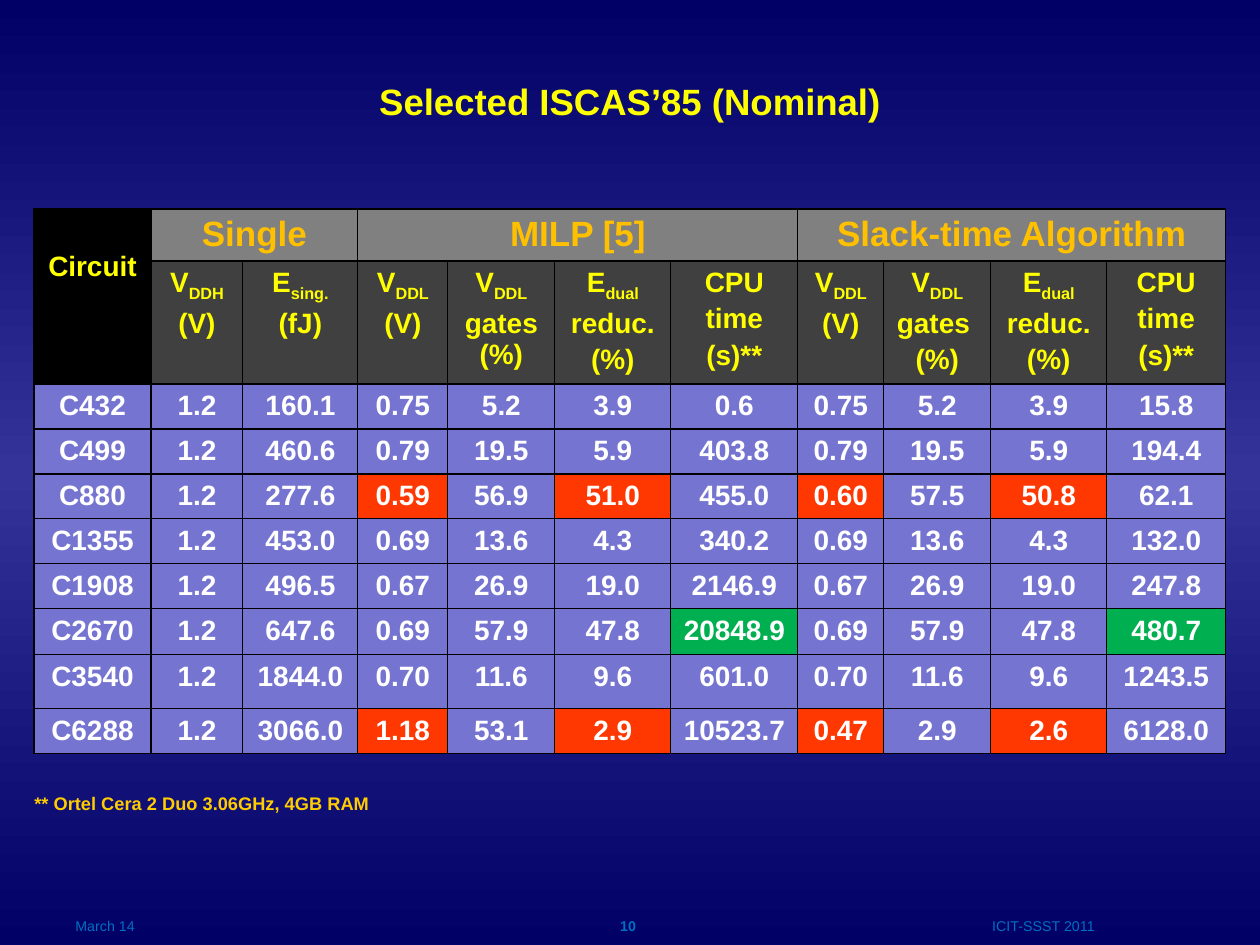
from copy import deepcopy
from dataclasses import dataclass

from lxml.etree import SubElement
from pptx import Presentation
from pptx.dml.color import RGBColor as Rgb
from pptx.enum.text import MSO_ANCHOR as Anchor, MSO_AUTO_SIZE as AutoSize, PP_ALIGN as Align
from pptx.oxml.ns import qn
from pptx.util import Pt


@dataclass(frozen=True)
class Theme:
    font: str = "Arial"
    edge: str = "000066"
    middle: str = "333399"
    yellow: str = "FFFF00"
    amber: str = "FFC000"
    note: str = "FFCC00"
    footer: str = "0070C0"
    white: str = "FFFFFF"
    black: str = "000000"
    group_fill: str = "808080"
    head_fill: str = "404040"
    body_fill: str = "7575D1"
    red: str = "FF3701"
    green: str = "00B050"
    title_size: int = 36
    group_size: int = 20
    cell_size: int = 16
    note_size: int = 18
    footer_size: int = 14


theme = Theme()
EMU_PER_PX = 914400 / 126
SUBSCRIPT = "-25000"


def px(*lengths):
    return [round(length * EMU_PER_PX) for length in lengths]


def write(frame, text, color, size, bold=True, align=Align.CENTER, lowered=False):
    """Lines are parted by |, and a subscript follows _."""
    frame.word_wrap = True
    for number, line in enumerate(text.split("|")):
        paragraph = frame.add_paragraph() if number else frame.paragraphs[0]
        paragraph.alignment = align
        if number:
            paragraph.space_before = Pt(3)
        base, _, subscript = line.partition("_")
        for part, is_low in ((base, lowered), (subscript, True)):
            if not part:
                continue
            run = paragraph.add_run()
            run.text = part
            values = {"name": theme.font, "size": Pt(size), "bold": bold}
            for name, value in values.items():
                setattr(run.font, name, value)
            run.font.color.rgb = Rgb.from_string(color)
            if is_low:
                run.font._element.set("baseline", SUBSCRIPT)


presentation = Presentation()
presentation.slide_width, presentation.slide_height = px(1260, 945)
slide = presentation.slides.add_slide(presentation.slide_layouts[5])

# Background gradient, dark at top and bottom
background = slide.background.fill
background.gradient()
background.gradient_angle = 90
stop_list = slide._element.xpath(".//a:gsLst")[0]
stop_list.insert(1, deepcopy(stop_list[0]))
stops = zip(background.gradient_stops, (0, 0.5, 1), (theme.edge, theme.middle, theme.edge))
for stop, position, color in stops:
    stop.position = position
    stop.color.rgb = Rgb.from_string(color)

# Results table
columns = [117, 92, 115, 90, 107, 116, 127, 86, 107, 116, 119]
rows = [52, 123, 45, 45, 45, 45, 45, 46, 54, 45]
groups = [(1, 2, "Single"), (3, 6, "MILP [5]"), (7, 10, "Slack-time Algorithm")]
headings = [
    "V_DDH|(V)", "E_sing.|(fJ)",
    "V_DDL|(V)", "V_DDL|gates (%)", "E_dual|reduc.|(%)", "CPU|time|(s)**",
    "V_DDL|(V)", "V_DDL|gates |(%)", "E_dual|reduc.|(%)", "CPU|time|(s)**",
]
results = [
    "C432 1.2 160.1 0.75 5.2 3.9 0.6 0.75 5.2 3.9 15.8",
    "C499 1.2 460.6 0.79 19.5 5.9 403.8 0.79 19.5 5.9 194.4",
    "C880 1.2 277.6 0.59 56.9 51.0 455.0 0.60 57.5 50.8 62.1",
    "C1355 1.2 453.0 0.69 13.6 4.3 340.2 0.69 13.6 4.3 132.0",
    "C1908 1.2 496.5 0.67 26.9 19.0 2146.9 0.67 26.9 19.0 247.8",
    "C2670 1.2 647.6 0.69 57.9 47.8 20848.9 0.69 57.9 47.8 480.7",
    "C3540 1.2 1844.0 0.70 11.6 9.6 601.0 0.70 11.6 9.6 1243.5",
    "C6288 1.2 3066.0 1.18 53.1 2.9 10523.7 0.47 2.9 2.6 6128.0",
]
highlights = {
    "C880": (theme.red, (3, 5, 7, 9)),
    "C2670": (theme.green, (6, 10)),
    "C6288": (theme.red, (3, 5, 7, 9)),
}

table = slide.shapes.add_table(
    len(rows), len(columns), *px(34, 209, sum(columns), sum(rows))).table
table.first_row = table.horz_banding = False
for column, width in zip(table.columns, px(*columns)):
    column.width = width
for row, height in zip(table.rows, px(*rows)):
    row.height = height

# Merged headings
circuit = table.cell(0, 0)
circuit.merge(table.cell(1, 0))
write(circuit.text_frame, "Circuit", theme.yellow, theme.cell_size)
for first, last, label in groups:
    cell = table.cell(0, first)
    cell.merge(table.cell(0, last))
    write(cell.text_frame, label, theme.amber, theme.group_size)

# Column headings and values
for column, heading in enumerate(headings, 1):
    write(table.cell(1, column).text_frame, heading, theme.yellow, theme.cell_size)
for row, result in enumerate(results, 2):
    for column, value in enumerate(result.split()):
        write(table.cell(row, column).text_frame, value, theme.white, theme.cell_size)

# Cell borders, margins and fills
for row in range(len(rows)):
    for column in range(len(columns)):
        cell = table.cell(row, column)
        cell.margin_left, cell.margin_right = px(12, 12)
        properties = cell._tc.get_or_add_tcPr()
        for side in ("a:lnL", "a:lnR", "a:lnT", "a:lnB"):
            border = SubElement(properties, qn(side), w=str(Pt(0.75)))
            SubElement(SubElement(border, qn("a:solidFill")), qn("a:srgbClr"), val=theme.black)
        if row < 2:
            fill = theme.black if column == 0 else (theme.group_fill, theme.head_fill)[row]
        else:
            color, marked = highlights.get(table.cell(row, 0).text, (theme.body_fill, ()))
            fill = color if column in marked else theme.body_fill
        cell.fill.solid()
        cell.fill.fore_color.rgb = Rgb.from_string(fill)
circuit.margin_top, = px(42)

# Footer and table note
texts = [
    ("March 14", (63, 895, 294, 65), theme.footer, theme.footer_size, False, Align.LEFT),
    ("ICIT-SSST 2011", (844, 895, 399, 65), theme.footer, theme.footer_size, False, Align.CENTER),
    ("10", (481, 895, 294, 65), theme.footer, theme.footer_size, True, Align.CENTER),
    ("** Ortel Cera 2 Duo 3.06GHz, 4GB RAM", (22, 765, 789, 50),
     theme.note, theme.note_size, True, Align.LEFT),
]
for text, place, color, size, bold, align in texts:
    box = slide.shapes.add_textbox(*px(*place))
    write(box.text_frame, text, color, size, bold, align, lowered=True)

# Title
title = slide.shapes.title
title.left, title.top, title.width, title.height = px(63, 1, 1134, 158)
title.text_frame.auto_size = AutoSize.NONE
title.text_frame.vertical_anchor = Anchor.MIDDLE
write(title.text_frame, "Selected ISCAS’85 (Nominal)", theme.yellow, theme.title_size, lowered=True)

presentation.save("out.pptx")
